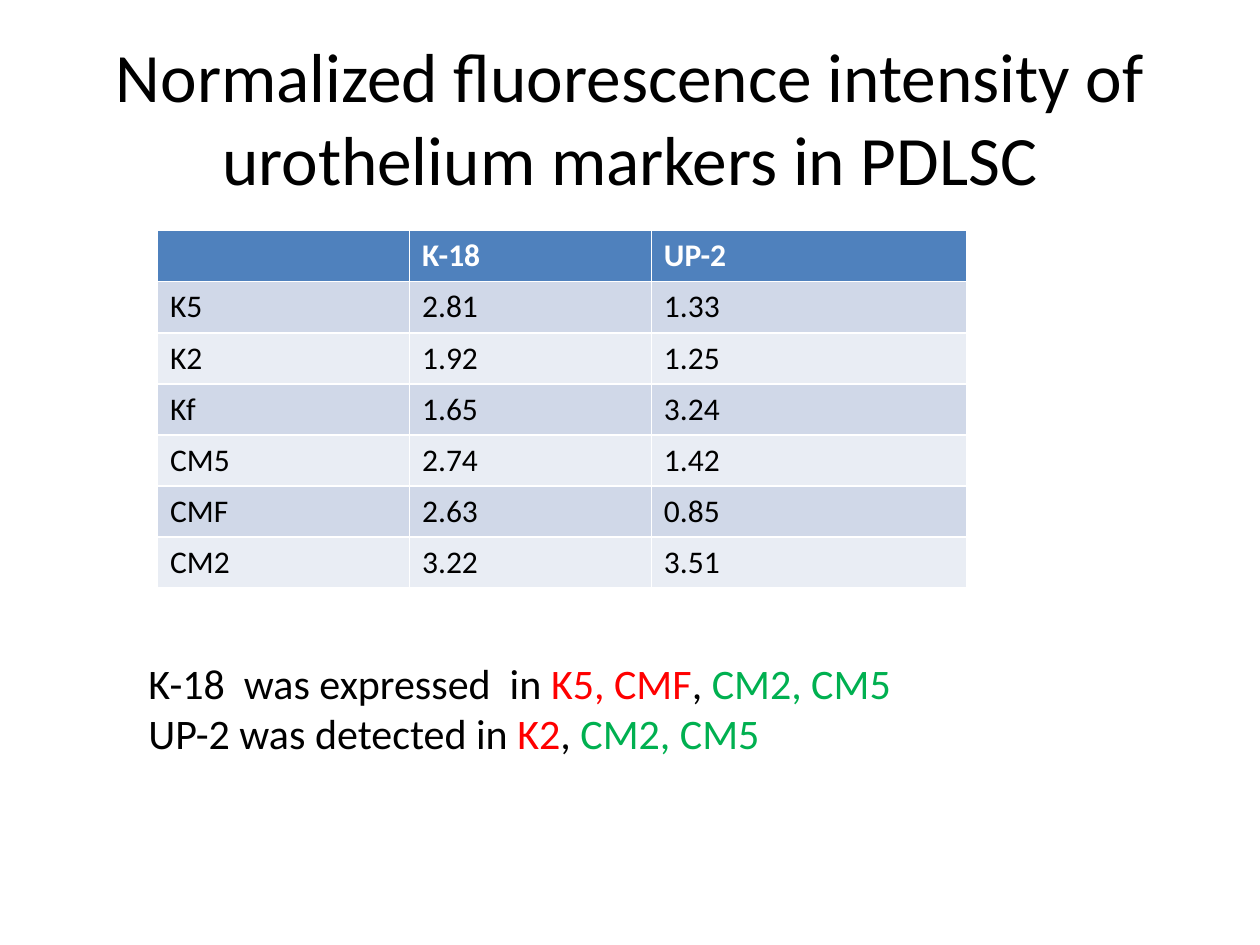
from dataclasses import dataclass

import pptx
import pptx.dml.color
import pptx.enum.text
import pptx.util

Inches = pptx.util.Inches
Pt = pptx.util.Pt

FONT = "Calibri"
COLOURS = {
    "text": "000000",
    "header_text": "FFFFFF",
    "header": "4F81BD",
    "odd_row": "D0D8E8",
    "even_row": "E9EDF4",
    "red": "FF0000",
    "green": "00B050",
}
SLIDE_WIDTH = Inches(10)
SLIDE_HEIGHT = Inches(7.5)
COLUMN_WIDTHS = (2, 1.92, 2.5)
ROW_HEIGHT = 2.84 / 7


@dataclass
class Box:
    """A place on the slide, in shares of its width and height."""
    left: float
    top: float
    width: float
    height: float

    def lengths(self) -> tuple[int, int, int, int]:
        return (int(self.left * SLIDE_WIDTH), int(self.top * SLIDE_HEIGHT),
                int(self.width * SLIDE_WIDTH), int(self.height * SLIDE_HEIGHT))


@dataclass
class Marker:
    cells: str
    k18: str
    up2: str


@dataclass
class Phrase:
    text: str
    colour: str = "text"


TITLE_BOX = Box(0.05, 0.04, 0.9, 1 / 6)
TABLE_BOX = Box(0.125, 0.244, 0.642, 0.379)
FINDINGS_BOX = Box(0.108, 0.689, 0.683, 0.121)

MARKERS = [
    Marker("", "K-18", "UP-2"),
    Marker("K5", "2.81", "1.33"),
    Marker("K2", "1.92", "1.25"),
    Marker("Kf", "1.65", "3.24"),
    Marker("CM5", "2.74", "1.42"),
    Marker("CMF", "2.63", "0.85"),
    Marker("CM2", "3.22", "3.51"),
]
FINDINGS = [
    [Phrase("K-18  was expressed  in "), Phrase("K5, CMF", "red"),
     Phrase(", "), Phrase("CM2, CM5", "green")],
    [Phrase("UP-2 was detected in "), Phrase("K2", "red"),
     Phrase(", "), Phrase("CM2, CM5", "green")],
]


def colour(name: str) -> pptx.dml.color.RGBColor:
    return pptx.dml.color.RGBColor.from_string(COLOURS[name])


def set_font(font, size: float, colour_name: str, bold: bool = False) -> None:
    font.name = FONT
    font.size = Pt(size)
    font.bold = bold
    font.color.rgb = colour(colour_name)


def add_title(slide, text: str) -> None:
    title = slide.shapes.title
    title.left, title.top, title.width, title.height = TITLE_BOX.lengths()
    title.text_frame.text = text
    title.text_frame.vertical_anchor = pptx.enum.text.MSO_ANCHOR.MIDDLE
    paragraph = title.text_frame.paragraphs[0]
    paragraph.alignment = pptx.enum.text.PP_ALIGN.CENTER
    set_font(paragraph.font, 39.6, "text")


def add_marker_table(slide, markers: list[Marker]) -> None:
    # The default table style supplies the white rules between cells
    table = slide.shapes.add_table(
        len(markers), len(COLUMN_WIDTHS), *TABLE_BOX.lengths()).table
    for column, width in zip(table.columns, COLUMN_WIDTHS):
        column.width = Inches(width)
    for index, marker in enumerate(markers):
        table.rows[index].height = Inches(ROW_HEIGHT)
        is_header = index == 0
        fill = "header" if is_header else ("even_row", "odd_row")[index % 2]
        text_colour = "header_text" if is_header else "text"
        for cell, text in zip(table.rows[index].cells,
                              (marker.cells, marker.k18, marker.up2)):
            cell.fill.solid()
            cell.fill.fore_color.rgb = colour(fill)
            cell.text = text
            set_font(cell.text_frame.paragraphs[0].font, 18, text_colour, is_header)


def add_findings(slide, findings: list[list[Phrase]]) -> None:
    frame = slide.shapes.add_textbox(*FINDINGS_BOX.lengths()).text_frame
    frame.word_wrap = True
    frame.auto_size = pptx.enum.text.MSO_AUTO_SIZE.SHAPE_TO_FIT_TEXT
    for index, phrases in enumerate(findings):
        paragraph = frame.add_paragraph() if index else frame.paragraphs[0]
        for phrase in phrases:
            run = paragraph.add_run()
            run.text = phrase.text
            set_font(run.font, 24, phrase.colour)


def main() -> None:
    presentation = pptx.Presentation()
    presentation.slide_width = SLIDE_WIDTH
    presentation.slide_height = SLIDE_HEIGHT
    # Title Only layout
    slide = presentation.slides.add_slide(presentation.slide_layouts[5])
    add_title(slide, "Normalized fluorescence intensity of "
                     "urothelium markers in PDLSC")
    add_marker_table(slide, MARKERS)
    add_findings(slide, FINDINGS)
    presentation.save("out.pptx")


if __name__ == "__main__":
    main()
